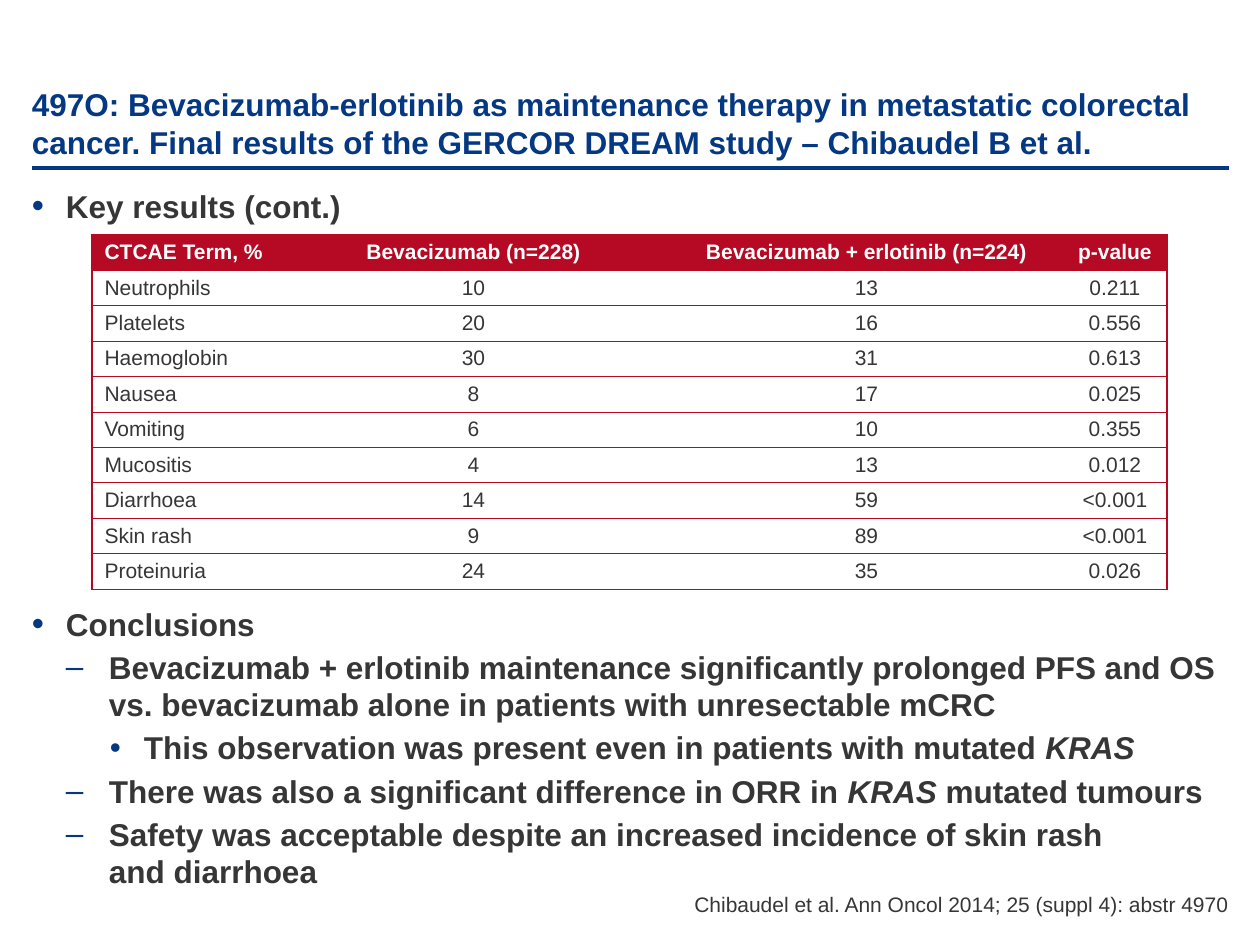
from lxml import etree
from pptx import Presentation
from pptx.dml.color import RGBColor
from pptx.enum.shapes import MSO_CONNECTOR
from pptx.enum.text import MSO_ANCHOR, PP_ALIGN
from pptx.oxml.ns import qn
from pptx.util import Pt

NAVY = RGBColor(0x04, 0x38, 0x82)
GREY = RGBColor(0x36, 0x36, 0x36)
RED = RGBColor(0xB6, 0x09, 0x23)
WHITE = RGBColor(0xFF, 0xFF, 0xFF)
LEFT, CENTER, RIGHT = PP_ALIGN.LEFT, PP_ALIGN.CENTER, PP_ALIGN.RIGHT
TOP, MIDDLE, BOTTOM = MSO_ANCHOR.TOP, MSO_ANCHOR.MIDDLE, MSO_ANCHOR.BOTTOM
STRAIGHT = MSO_CONNECTOR.STRAIGHT
FONT = "Arial"
SCALE = 914400 / 126
LINE = Pt(21.6)

TITLE = ("497O: Bevacizumab-erlotinib as maintenance therapy in metastatic colorectal "
         "cancer. Final results of the GERCOR DREAM study – Chibaudel B et al.")
SOURCE = "Chibaudel et al. Ann Oncol 2014; 25 (suppl 4): abstr 4970"
GENE = "KRAS"
BREAK = "\n"

# level, space before, space after, runs
POINTS = [
    (0, 0, 6, ["Key results (cont.)"]),
    (0, 211, 3, ["Conclusions"]),
    (1, 0, 3, ["Bevacizumab + erlotinib maintenance significantly prolonged PFS and OS "
               "vs. bevacizumab alone in patients with unresectable mCRC"]),
    (2, 0, 3, ["This observation was present even in patients with mutated ", GENE]),
    (1, 0, 3, ["There was also a significant difference in ORR in ", GENE,
               " mutated tumours"]),
    (1, 0, 3, ["Safety was acceptable despite an increased incidence of skin rash ",
               BREAK, "and diarrhoea"]),
]
# bullet, bullet size in %, text indent, hanging indent
LEVELS = [("•", 110, 34, 34), ("–", 100, 77, 43), ("•", 100, 112, 34)]

ROWS = [
    ("CTCAE Term, %", "Bevacizumab (n=228)", "Bevacizumab + erlotinib (n=224)", "p-value"),
    ("Neutrophils", "10", "13", "0.211"),
    ("Platelets", "20", "16", "0.556"),
    ("Haemoglobin", "30", "31", "0.613"),
    ("Nausea", "8", "17", "0.025"),
    ("Vomiting", "6", "10", "0.355"),
    ("Mucositis", "4", "13", "0.012"),
    ("Diarrhoea", "14", "59", "<0.001"),
    ("Skin rash", "9", "89", "<0.001"),
    ("Proteinuria", "24", "35", "0.026"),
]
WIDTHS = [185, 393, 393, 104]
HEIGHT = 35


def px(n):
    """Turn pixels into EMU."""
    return round(n * SCALE)


def style(para, size, color, bold=False, align=LEFT, line=None):
    """Set the look of a paragraph."""
    font = para.font
    font.name, font.size, font.bold = FONT, Pt(size), bold
    font.color.rgb = color
    para.alignment = align
    para.line_spacing = line


def add_box(slide, box, anchor, pad=(0, 0)):
    """Add a wrapping text box and return its frame."""
    frame = slide.shapes.add_textbox(*map(px, box)).text_frame
    frame.word_wrap = True
    frame.vertical_anchor = anchor
    frame.margin_left = frame.margin_right = 0
    frame.margin_top, frame.margin_bottom = map(px, pad)
    return frame


def add_bullet(para, level):
    """Give a paragraph the bullet and indent of its level."""
    mark, size, left, hang = LEVELS[level]
    para.level = level
    props = para._p.get_or_add_pPr()
    props.set("marL", str(px(left)))
    props.set("indent", str(-px(hang)))
    tint = etree.Element(qn("a:buClr"))
    etree.SubElement(tint, qn("a:srgbClr"), val=str(NAVY))
    parts = [
        tint,
        etree.Element(qn("a:buSzPct"), val=str(size * 1000)),
        etree.Element(qn("a:buFont"), typeface=FONT),
        etree.Element(qn("a:buChar"), char=mark),
    ]
    spot = props.index(props.find(qn("a:defRPr")))
    props[spot:spot] = parts


def add_points(slide):
    """Add the bulleted text."""
    frame = add_box(slide, (32, 181, 1197, 732), TOP, (6, 6))
    for i, (level, before, after, runs) in enumerate(POINTS):
        para = frame.add_paragraph() if i else frame.paragraphs[0]
        style(para, 18, GREY, True, line=LINE)
        para.space_before, para.space_after = Pt(before), Pt(after)
        add_bullet(para, level)
        for text in runs:
            if text == BREAK:
                para.add_line_break()
                continue
            run = para.add_run()
            run.text = text
            if text == GENE:
                run.font.italic = True


def set_edges(cell, sides):
    """Draw the named sides of a cell and clear the others."""
    props = cell._tc.get_or_add_tcPr()
    for i, side in enumerate("LRTB"):
        edge = etree.Element(qn("a:ln" + side), w=str(Pt(0.75)))
        if side in sides:
            fill = etree.SubElement(edge, qn("a:solidFill"))
            etree.SubElement(fill, qn("a:srgbClr"), val=str(RED))
        else:
            etree.SubElement(edge, qn("a:noFill"))
        props.insert(i, edge)


def add_grid(slide):
    """Add the table of adverse events."""
    size = (sum(WIDTHS), HEIGHT * len(ROWS))
    grid = slide.shapes.add_table(len(ROWS), len(WIDTHS), *map(px, (92, 235) + size)).table
    for col, width in zip(grid.columns, WIDTHS):
        col.width = px(width)
    last = len(WIDTHS) - 1
    for r, row in enumerate(ROWS):
        grid.rows[r].height = px(HEIGHT)
        for c, text in enumerate(row):
            cell = grid.cell(r, c)
            cell.text = text
            cell.vertical_anchor = MIDDLE
            style(cell.text_frame.paragraphs[0], 12, GREY if r else WHITE, r == 0,
                  CENTER if c else LEFT, Pt(13))
            cell.fill.solid()
            cell.fill.fore_color.rgb = WHITE if r else RED
            set_edges(cell, "TB" + "L" * (c == 0) + "R" * (c == last))


def main():
    """Build the slide."""
    deck = Presentation()
    deck.slide_width, deck.slide_height = px(1260), px(945)
    slide = deck.slides.add_slide(deck.slide_layouts[6])

    rule = slide.shapes.add_connector(STRAIGHT, *map(px, (32, 168, 1229, 168)))
    rule.line.color.rgb, rule.line.width = NAVY, Pt(2.25)
    etree.SubElement(rule._element.spPr, qn("a:effectLst"))

    add_points(slide)
    head = add_box(slide, (32, 32, 1197, 129), BOTTOM, (6, 0)).paragraphs[0]
    head.text = TITLE
    style(head, 18, NAVY, True, line=LINE)
    foot = add_box(slide, (678, 892, 551, 25), BOTTOM).paragraphs[0]
    foot.text = SOURCE
    style(foot, 12, GREY, align=RIGHT)
    add_grid(slide)
    deck.save("out.pptx")


if __name__ == "__main__":
    main()
